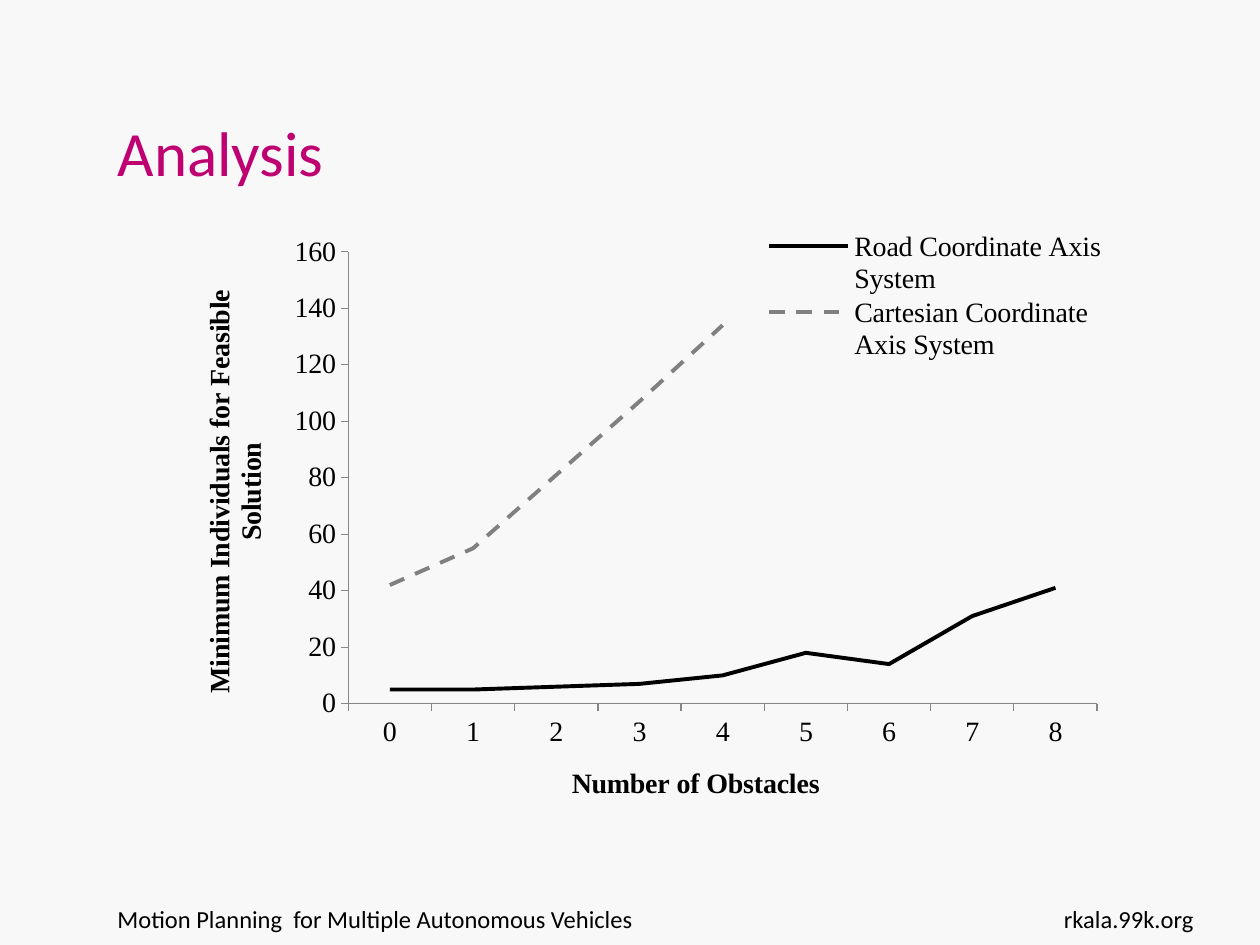
"""Build the analysis slide with its line chart of obstacles."""
import pptx
import pptx.chart.data
import pptx.dml.color
import pptx.enum.chart
import pptx.enum.dml
import pptx.enum.text
import pptx.oxml
import pptx.oxml.ns
import pptx.util

RGB = pptx.dml.color.RGBColor
ALIGN = pptx.enum.text.PP_ALIGN
DASH = pptx.enum.dml.MSO_LINE
TICK = pptx.enum.chart.XL_TICK_MARK
BLACK = RGB(0, 0, 0)
GRAY = RGB(0x80, 0x80, 0x80)
AXIS = RGB(0x86, 0x86, 0x86)
PINK = RGB(0xBF, 0x00, 0x71)
PAPER = RGB(0xF8, 0xF8, 0xF8)
SCALE = 914400 / 126

TITLE = ("Analysis", (105, 38, 853, 157))
FOOT = [
    ("Motion Planning  for Multiple Autonomous Vehicles", (105, 898, 873, 66), ALIGN.LEFT),
    ("rkala.99k.org", (1017, 898, 189, 66), ALIGN.RIGHT),
]
CHART = (174, 224, 942, 605)
PLOT = (348, 252, 749, 452)
LEGEND = (770, 228, 342, 136)
CATS = [str(n) for n in range(9)]
LINES = [
    ("Road Coordinate Axis System", (5, 5, 6, 7, 10, 18, 14, 31, 41), BLACK, DASH.SOLID),
    ("Cartesian Coordinate Axis System", (42, 55, 81, 107, 134) + (None,) * 4, GRAY, DASH.DASH),
]
TITLE_FONT = {"name": "Calibri", "size": pptx.util.Pt(36)}
FOOT_FONT = {"name": "Calibri", "size": pptx.util.Pt(14)}
CHART_FONT = {"name": "Times New Roman", "size": pptx.util.Pt(16)}


def place(box):
    return [round(n * SCALE) for n in box]


def style(font, form, color):
    for key, val in form.items():
        setattr(font, key, val)
    font.color.rgb = color


def write(shape, text, align, form, color):
    frame = shape.text_frame
    frame.text = text
    frame.word_wrap = True
    frame.paragraphs[0].alignment = align
    style(frame.paragraphs[0].font, form, color)
    return frame


def layout(box, inner=False):
    left, top, wide, high = CHART
    parts = {
        "x": (box[0] - left) / wide,
        "y": (box[1] - top) / high,
        "w": box[2] / wide,
        "h": box[3] / high,
    }
    tags = '<c:layoutTarget val="inner"/>' if inner else ""
    tags += '<c:xMode val="edge"/><c:yMode val="edge"/>'
    tags += "".join(f'<c:{key} val="{val:.3f}"/>' for key, val in parts.items())
    space = pptx.oxml.ns.nsdecls("c")
    return pptx.oxml.parse_xml(
        f"<c:layout {space}><c:manualLayout>{tags}</c:manualLayout></c:layout>")


def set_axis(axis, text):
    axis.has_major_gridlines = False
    axis.major_tick_mark = TICK.OUTSIDE
    axis.minor_tick_mark = TICK.NONE
    axis.format.line.color.rgb = AXIS
    style(axis.tick_labels.font, CHART_FONT, BLACK)
    frame = axis.axis_title.text_frame
    frame.text = text
    style(frame.paragraphs[0].runs[0].font, CHART_FONT | {"bold": True}, BLACK)


def add_chart(slide):
    data = pptx.chart.data.CategoryChartData()
    data.categories = CATS
    for name, vals, *_ in LINES:
        data.add_series(name, vals)
    kind = pptx.enum.chart.XL_CHART_TYPE.LINE
    chart = slide.shapes.add_chart(kind, *place(CHART), data).chart
    chart.has_title = False
    style(chart.font, CHART_FONT, BLACK)
    chart.plots[0].vary_by_categories = False
    for line, (_, _, color, dash) in zip(chart.plots[0].series, LINES):
        line.smooth = False
        line.marker.style = pptx.enum.chart.XL_MARKER_STYLE.NONE
        line.format.line.color.rgb = color
        line.format.line.width = pptx.util.Pt(2.25)
        line.format.line.dash_style = dash
    set_axis(chart.category_axis, "Number of Obstacles")
    set_axis(chart.value_axis, "Minimum Individuals for Feasible Solution")
    for key, val in {"minimum_scale": 0, "maximum_scale": 160, "major_unit": 20}.items():
        setattr(chart.value_axis, key, val)
    chart.has_legend = True
    legend = chart.legend
    legend.position = pptx.enum.chart.XL_LEGEND_POSITION.CORNER
    legend.include_in_layout = True
    style(legend.font, CHART_FONT, BLACK)
    area = chart.plots[0]._element.getparent()
    for root, spot, new in (
        (area, 0, layout(PLOT, True)),
        (legend._element, 1, layout(LEGEND)),
    ):
        for old in root.findall(pptx.oxml.ns.qn("c:layout")):
            root.remove(old)
        root.insert(spot, new)


def main():
    deck = pptx.Presentation()
    deck.slide_width, deck.slide_height = place((1260, 945))
    slide = deck.slides.add_slide(deck.slide_layouts[5])
    slide.background.fill.solid()
    slide.background.fill.fore_color.rgb = PAPER
    text, box = TITLE
    title = slide.shapes.title
    title.left, title.top, title.width, title.height = place(box)
    frame = write(title, text, ALIGN.LEFT, TITLE_FONT, PINK)
    frame.vertical_anchor = pptx.enum.text.MSO_ANCHOR.BOTTOM
    for text, box, align in FOOT:
        write(slide.shapes.add_textbox(*place(box)), text, align, FOOT_FONT, BLACK)
    add_chart(slide)
    deck.save("out.pptx")


if __name__ == "__main__":
    main()
